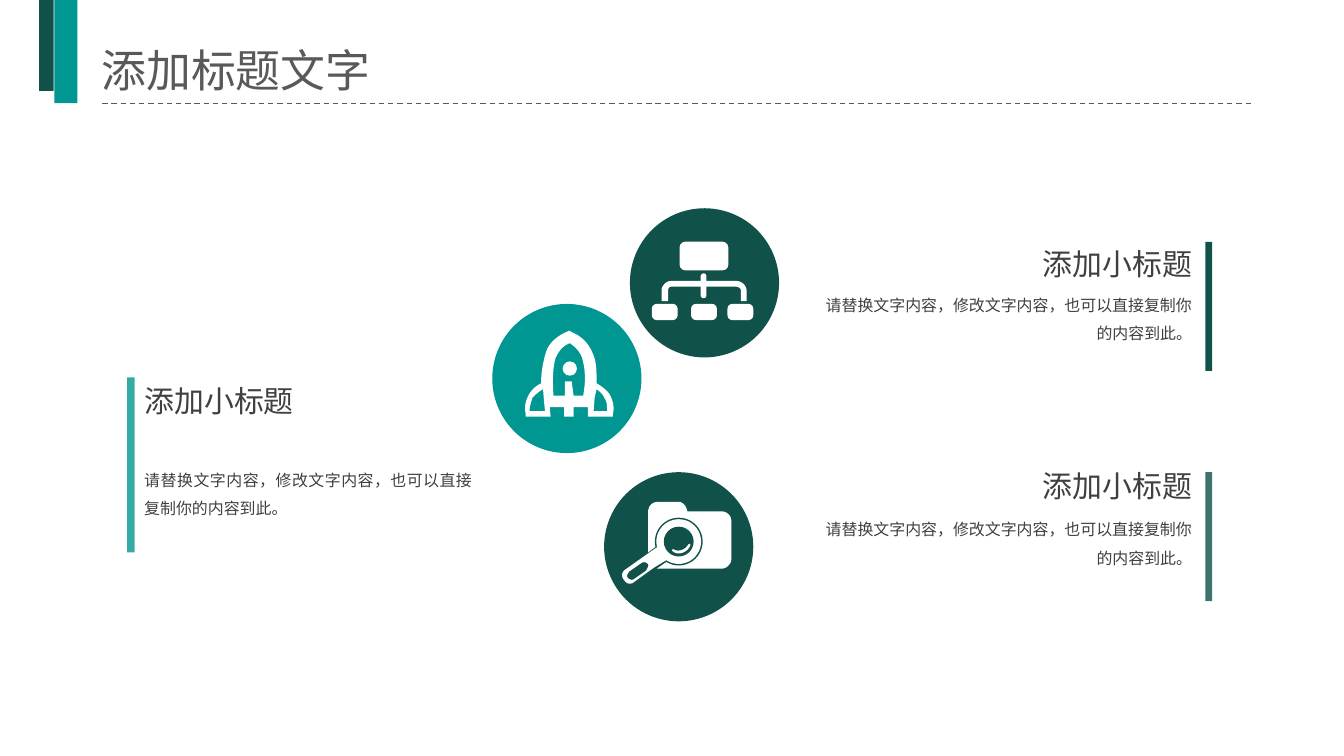
from dataclasses import dataclass

from lxml import etree
from pptx import Presentation
from pptx.dml.color import RGBColor
from pptx.enum.dml import MSO_LINE
from pptx.enum.shapes import MSO_CONNECTOR, MSO_SHAPE
from pptx.enum.text import MSO_ANCHOR, MSO_AUTO_SIZE, PP_ALIGN
from pptx.oxml.ns import qn
from pptx.util import Inches, Pt

RECTANGLE, ROUNDED, OVAL = MSO_SHAPE.RECTANGLE, MSO_SHAPE.ROUNDED_RECTANGLE, MSO_SHAPE.OVAL
LEFT, RIGHT, JUSTIFY = PP_ALIGN.LEFT, PP_ALIGN.RIGHT, PP_ALIGN.JUSTIFY
TOP, MIDDLE = MSO_ANCHOR.TOP, MSO_ANCHOR.MIDDLE
GROW, FIXED = MSO_AUTO_SIZE.SHAPE_TO_FIT_TEXT, MSO_AUTO_SIZE.NONE
DASH, STRAIGHT = MSO_LINE.DASH, MSO_CONNECTOR.STRAIGHT


@dataclass(frozen=True)
class Theme:
    dark: str = "105249"
    teal: str = "009692"
    white: str = "FFFFFF"
    title_color: str = "595959"
    text_color: str = "404040"
    title_font: str = "Noto Sans CJK SC"
    text_font: str = "Arial"
    title_size: float = 33.8
    heading_size: float = 22.5
    body_size: float = 12


THEME = Theme()
COLUMNS = 100  # square grid cells across the slide width
DISC = 11.1  # disc diameter in columns
BODY = "请替换文字内容，修改文字内容，也可以直接复制你的内容到此。"

# Icon outlines in percent of the disc: pairs are corners, sixes are Bézier curves
ROCKET = [
    [(54.5, 69.2), (54.5, 75.6), (48.1, 75.6), (48.1, 69.2), (38.5, 69.2), (39.1, 75.6),
     (22.4, 75.6), (22.4, 73.7), (21.2, 69.2, 22.4, 64.7, 24.4, 60.9),
     (26.3, 57.7, 28.8, 55.1, 32.7, 53.2), (32.7, 45.5, 34, 39.7, 35.3, 34.6),
     (37.2, 26.3, 42.9, 21.8, 50, 18.6), (51.9, 17.9), (52.6, 18.6),
     (60.3, 21.8, 64.7, 26.3, 67.9, 34.6), (69.9, 39.7, 69.9, 45.5, 69.9, 53.2),
     (73.1, 55.1, 76.9, 57.7, 78.8, 60.9), (80.8, 64.7, 82, 69.2, 80.8, 73.7),
     (80.8, 75.6), (64.1, 75.6), (64.1, 69.2)],
    [(51.9, 26.3), (46.8, 28.2, 44.2, 32.1, 42.3, 36.5), (40.4, 43.6, 40.4, 51.3, 41, 61.5),
     (48.7, 61.5), (48.7, 51.9), (53.2, 51.9), (54.5, 61.5), (60.9, 61.5),
     (62.8, 51.3, 62.2, 43.6, 60.3, 36.5), (59, 32.1, 55.1, 28.2, 51.9, 26.3)],
    [(68.6, 62.8), (67.9, 71.8), (76.9, 71.8), (76.9, 67.9, 76.9, 65.4, 75, 62.8),
     (74.4, 60.9, 72.4, 59, 69.9, 57.1)],
    [(35.3, 71.8), (34.6, 64.7), (34, 57.1), (30.8, 59, 28.8, 60.9, 26.9, 62.8),
     (26.3, 65.4, 25, 67.9, 25, 71.8)],
]
BRANCHES = [
    [(21.2, 62.2), (21.2, 55.1), (21.2, 51.9, 24.4, 48.7, 27.6, 48.7), (71.2, 48.7),
     (75, 48.7, 78.2, 51.9, 78.2, 55.1), (78.2, 62.2), (74.4, 62.2), (74.4, 55.1),
     (74.4, 53.8, 73, 52.6, 71.2, 52.6), (27.6, 52.6),
     (26.3, 52.6, 25.6, 53.8, 25.6, 55.1), (25.6, 62.2)],
]
FOLDER = [
    [(78.8, 26.3), (55.8, 26.3), (55.1, 22.4, 52.6, 19.9, 50, 19.9), (36.5, 19.9),
     (32.7, 19.9, 29.5, 22, 29.5, 27), (29.5, 53.8), (34.6, 50), (41.7, 60.3),
     (35.3, 64.7), (78.8, 64.7), (82, 64.7, 85.3, 61.5, 85.3, 58.3), (85.3, 32.7),
     (85.3, 28.8, 82, 26.3, 78.8, 26.3)],
]
HANDLE = [
    [(36, 50), (29.5, 54.5), (14.1, 65.4), (11.5, 67, 11.5, 70.5, 13.5, 72.4),
     (15, 75, 18, 75.5, 20, 73.7), (33.3, 64.1), (41.7, 59)],
    [(16.7, 66.7), (25, 60.9), (27, 59.5, 30.5, 61, 29.5, 63.5), (28.2, 66),
     (19.9, 71.8), (18, 73, 15, 71, 15.4, 69)],
]
GLINT = [
    [(57, 48), (58, 48, 58, 49, 57.7, 49.4), (56, 53, 52.5, 54.5, 50, 54.5),
     (47.5, 54.5, 46, 53, 45.5, 52.6), (45.7, 51.5, 46.5, 51.5, 46.8, 51.9),
     (50, 53.5, 54, 52, 55.8, 49.4)],
]


def flatten(contour, steps=10):
    """Turn corners and Bézier curves into a list of points."""
    points = []
    for segment in contour:
        if len(segment) == 2:
            points.append(segment)
            continue
        controls = [points[-1], segment[:2], segment[2:4], segment[4:]]
        for step in range(1, steps + 1):
            t = step / steps
            weights = ((1 - t) ** 3, 3 * t * (1 - t) ** 2, 3 * t * t * (1 - t), t ** 3)
            points.append(tuple(sum(weight * control[axis] for weight, control
                                    in zip(weights, controls)) for axis in (0, 1)))
    return points


class SlideBuilder:
    def __init__(self, presentation, theme):
        self.theme = theme
        self.unit = presentation.slide_width / COLUMNS
        self.slide = presentation.slides.add_slide(presentation.slide_layouts[5])

    def grid(self, *values):
        return [round(value * self.unit) for value in values]

    def paint(self, shape, color, opacity=100):
        shape.shadow.inherit = False
        shape.fill.solid()
        shape.fill.fore_color.rgb = RGBColor.from_string(color)
        shape.line.fill.background()
        if opacity < 100:
            color_element = shape._element.spPr.find(".//" + qn("a:srgbClr"))
            etree.SubElement(color_element, qn("a:alpha")).set("val", str(opacity * 1000))

    def shape(self, kind, box, color, opacity=100, rounding=None):
        shape = self.slide.shapes.add_shape(kind, *self.grid(*box))
        if rounding is not None:
            shape.adjustments[0] = rounding
        self.paint(shape, color, opacity)

    def icon_shape(self, kind, disc, box, color, rounding=None):
        left, top, width, height = (value * DISC / 100 for value in box)
        self.shape(kind, (disc[0] + left, disc[1] + top, width, height), color,
                   rounding=rounding)

    def icon_circle(self, disc, center, radius, color):
        box = (center[0] - radius, center[1] - radius, 2 * radius, 2 * radius)
        self.icon_shape(OVAL, disc, box, color)

    def icon_outline(self, disc, contours):
        builder = None
        for contour in contours:
            points = [self.grid(disc[0] + x * DISC / 100, disc[1] + y * DISC / 100)
                      for x, y in flatten(contour)]
            if builder is None:
                builder = self.slide.shapes.build_freeform(*points[0])
            else:
                builder.move_to(*points[0])
            builder.add_line_segments(points[1:], close=True)
        self.paint(builder.convert_to_shape(), self.theme.white)

    def set_text(self, shape, text, size, color, font, spacing, align, anchor, auto_size):
        frame = shape.text_frame
        frame.text = text
        frame.word_wrap, frame.auto_size, frame.vertical_anchor = True, auto_size, anchor
        paragraph = frame.paragraphs[0]
        paragraph.alignment, paragraph.line_spacing = align, spacing
        run = paragraph.runs[0]
        run.font.size, run.font.name, run.font.bold = Pt(size), font, False
        run.font.color.rgb = RGBColor.from_string(color)
        etree.SubElement(run._r.get_or_add_rPr(), qn("a:ea")).set("typeface", font)

    def title(self, text, box):
        shape = self.slide.shapes.title
        shape.left, shape.top, shape.width, shape.height = self.grid(*box)
        self.set_text(shape, text, self.theme.title_size, self.theme.title_color,
                      self.theme.title_font, 0.9, LEFT, MIDDLE, FIXED)

    def text(self, text, box, size, spacing, align):
        shape = self.slide.shapes.add_textbox(*self.grid(*box))
        self.set_text(shape, text, size, self.theme.text_color, self.theme.text_font,
                      spacing, align, TOP, GROW)

    def dashed_line(self, start, end, color):
        line = self.slide.shapes.add_connector(STRAIGHT, *self.grid(*start, *end))
        line.line.color.rgb = RGBColor.from_string(color)
        line.line.width, line.line.dash_style = Pt(1), DASH
        etree.SubElement(line._element.spPr, qn("a:effectLst"))


def main():
    presentation = Presentation()
    presentation.slide_width, presentation.slide_height = Inches(14.06), Inches(7.91)
    page = SlideBuilder(presentation, THEME)

    # Header
    page.title("添加标题文字", (6.83, 3.2, 50.14, 4.48))
    page.shape(RECTANGLE, (2.92, 0, 1.07, 6.76), THEME.dark)
    page.shape(RECTANGLE, (4.04, 0, 1.71, 7.68), THEME.teal)
    page.dashed_line((7.61, 7.68), (93.17, 7.68), THEME.title_color)

    # Discs
    folder_disc, rocket_disc, chart_disc = (44.95, 35.14), (36.63, 22.62), (46.87, 15.5)
    for disc, color in ((folder_disc, THEME.dark), (rocket_disc, THEME.teal),
                        (chart_disc, THEME.dark)):
        page.shape(OVAL, (*disc, DISC, DISC), color)

    # Folder with magnifier
    lens = (50, 46.5)
    page.icon_outline(folder_disc, FOLDER)
    page.icon_circle(folder_disc, lens, 16, THEME.dark)
    page.icon_outline(folder_disc, HANDLE)
    page.icon_circle(folder_disc, lens, 15, THEME.white)
    page.icon_circle(folder_disc, lens, 10, THEME.dark)
    page.icon_outline(folder_disc, GLINT)

    # Rocket
    page.icon_outline(rocket_disc, ROCKET)
    page.icon_circle(rocket_disc, (51.9, 43.3), 4.8, THEME.white)

    # Organisation chart
    page.icon_outline(chart_disc, BRANCHES)
    nodes = [((33.3, 22.4, 32.7, 19.2), 0.2), ((47.4, 43.6, 3.9, 16.7), 0.5)]
    nodes += [((left, 64.1, 17.3, 10.9), 0.3) for left in (14.7, 41, 65.4)]
    for box, rounding in nodes:
        page.icon_shape(ROUNDED, chart_disc, box, THEME.white, rounding)

    # Captions: heading top, body top, left edge, body width, alignments, accent bar
    right_edge = 89.4
    captions = [
        (27.6, 33.93, 10.03, 25.82, LEFT, JUSTIFY, (9.46, 28.09, 0.57, 13.02), THEME.teal, 80),
        (17.43, 20.91, 60.24, 29.16, RIGHT, RIGHT, (89.69, 18, 0.5, 9.6), THEME.dark, 100),
        (33.93, 37.62, 60.24, 29.16, RIGHT, RIGHT, (89.69, 35.14, 0.5, 9.6), THEME.dark, 80),
    ]
    for heading_top, body_top, left, width, heading_align, body_align, bar, color, opacity in captions:
        heading_left = left if heading_align == LEFT else right_edge - 14.72
        page.shape(RECTANGLE, bar, color, opacity)
        page.text("添加小标题", (heading_left, heading_top, 14.72, 3.7),
                  THEME.heading_size, 1.2, heading_align)
        page.text(BODY, (left, body_top, width, 4.77), THEME.body_size, 1.5, body_align)

    presentation.save("out.pptx")


if __name__ == "__main__":
    main()
